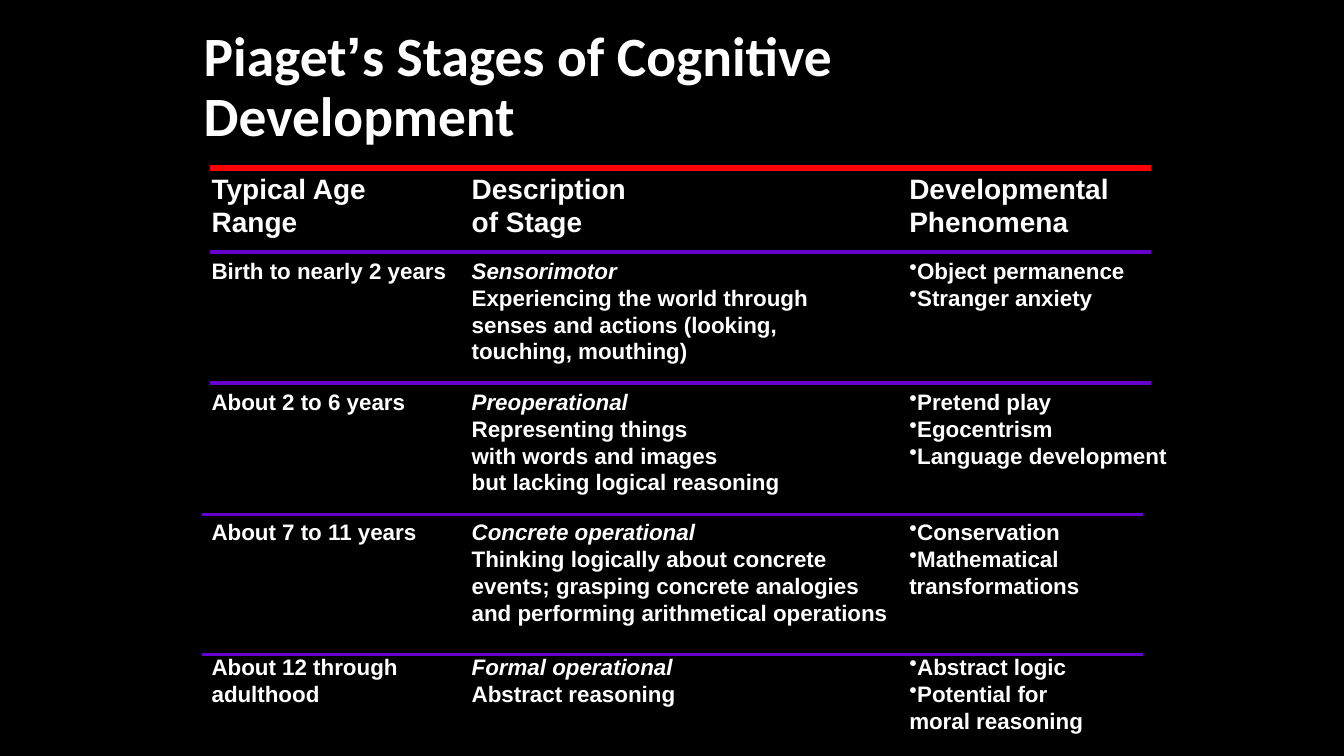
from lxml.etree import SubElement as Sub
from pptx import Presentation
from pptx.dml.color import RGBColor
from pptx.enum.shapes import MSO_CONNECTOR as Conn
from pptx.enum.text import MSO_ANCHOR as Anchor, MSO_AUTO_SIZE as Auto, PP_ALIGN as Align
from pptx.oxml.ns import qn
from pptx.util import Emu, Pt

SCALE = 9144
WHITE, RED, VIOLET = "FFFFFF", "FF0000", "6600CC"
COLS = [(200, 262), (458, 440), (892, 280)]
HEADS = [["Typical Age", "Range"], ["Description", "of Stage"], ["Developmental", "Phenomena"]]
STAGES = [
    (250, 280, ["Birth to nearly 2 years"],
     ["Sensorimotor", "Experiencing the world through",
      "senses and actions (looking,", "touching, mouthing)"],
     ["Object permanence", "Stranger anxiety"]),
    (380, 280, ["About 2 to 6 years"],
     ["Preoperational", "Representing things",
      "with words and images", "but lacking logical reasoning"],
     ["Pretend play", "Egocentrism", "Language development"]),
    (509, 200, ["About 7 to 11 years"],
     ["Concrete operational", "Thinking logically about concrete",
      "events; grasping concrete analogies", "and performing arithmetical operations"],
     ["Conservation", "Mathematical transformations"]),
    (643, 200, ["About 12 through", "adulthood"],
     ["Formal operational", "Abstract reasoning"],
     ["Abstract logic", "Potential for moral reasoning"]),
]
RULES = [(208, 167, RED, 4.5), (208, 250, VIOLET, 2.25), (208, 380, VIOLET, 2.25),
         (200, 510, VIOLET, 2.25), (200, 649, VIOLET, 2.25)]


def px(num):
    """Turn px into EMU."""
    return Emu(num * SCALE)


def tint(code):
    """Turn a hex string into a colour."""
    return RGBColor.from_string(code)


def style(run, size, face="Arial", slant=False):
    """Set the font of a run."""
    form = {"size": Pt(size), "name": face, "bold": True, "italic": slant}
    for key, val in form.items():
        setattr(run.font, key, val)
    run.font.color.rgb = tint(WHITE)


def bullet(para):
    """Put a bullet with no indent before a paragraph."""
    props = para._p.get_or_add_pPr()
    props.set("marL", "0")
    props.set("indent", "0")
    Sub(props, qn("a:buChar")).set("char", "•")


def cell(slide, box, lines, size, slant=False, dots=False):
    """Write lines into a text box, the first in italics if slant is set."""
    frame = slide.shapes.add_textbox(*map(px, box)).text_frame
    frame.word_wrap = True
    for i, line in enumerate(lines):
        para = frame.add_paragraph() if i else frame.paragraphs[0]
        run = para.add_run()
        run.text = line
        style(run, size, slant=slant and i == 0)
        if dots:
            bullet(para)


def row(slide, top, wide, texts, size, stage=True):
    """Place one row of three cells, the last of the given width."""
    for i, ((left, width), lines) in enumerate(zip(COLS, texts)):
        width = wide if i == 2 else width
        high = 10 + len(lines) * size * 17 // 10
        cell(slide, (left, top, width, high), lines, size, stage and i == 1, stage and i == 2)


def rule(slide, left, top, color, weight):
    """Draw a level line across the table."""
    line = slide.shapes.add_connector(Conn.STRAIGHT, px(left), px(top), px(left + 934), px(top))
    line.line.color.rgb = tint(color)
    line.line.width = Pt(weight)
    Sub(line._element.spPr, qn("a:effectLst"))


def heading(slide, box):
    """Place and format the title."""
    title = slide.shapes.title
    for key, val in zip(("left", "top", "width", "height"), box):
        setattr(title, key, px(val))
    frame = title.text_frame
    form = {"word_wrap": True, "auto_size": Auto.NONE, "vertical_anchor": Anchor.MIDDLE}
    for key, val in form.items():
        setattr(frame, key, val)
    para = frame.paragraphs[0]
    para.alignment = Align.LEFT
    para.line_spacing = 0.9
    for text, face in [("Piaget", "Calibri"), ("’", "Arial"),
                       ("s Stages of Cognitive Development", "Calibri")]:
        run = para.add_run()
        run.text = text
        style(run, 39.6, face)


def main():
    """Build and save the slide."""
    deck = Presentation()
    deck.slide_width, deck.slide_height = px(1333), px(750)
    slide = deck.slides.add_slide(deck.slide_layouts[5])
    fill = slide.background.fill
    fill.solid()
    fill.fore_color.rgb = tint("000000")
    heading(slide, (192, 25, 956, 125))
    row(slide, 165, 280, HEADS, 20, stage=False)
    for top, wide, *texts in STAGES:
        row(slide, top, wide, texts, 16)
    for item in RULES:
        rule(slide, *item)
    deck.save("out.pptx")


if __name__ == "__main__":
    main()
